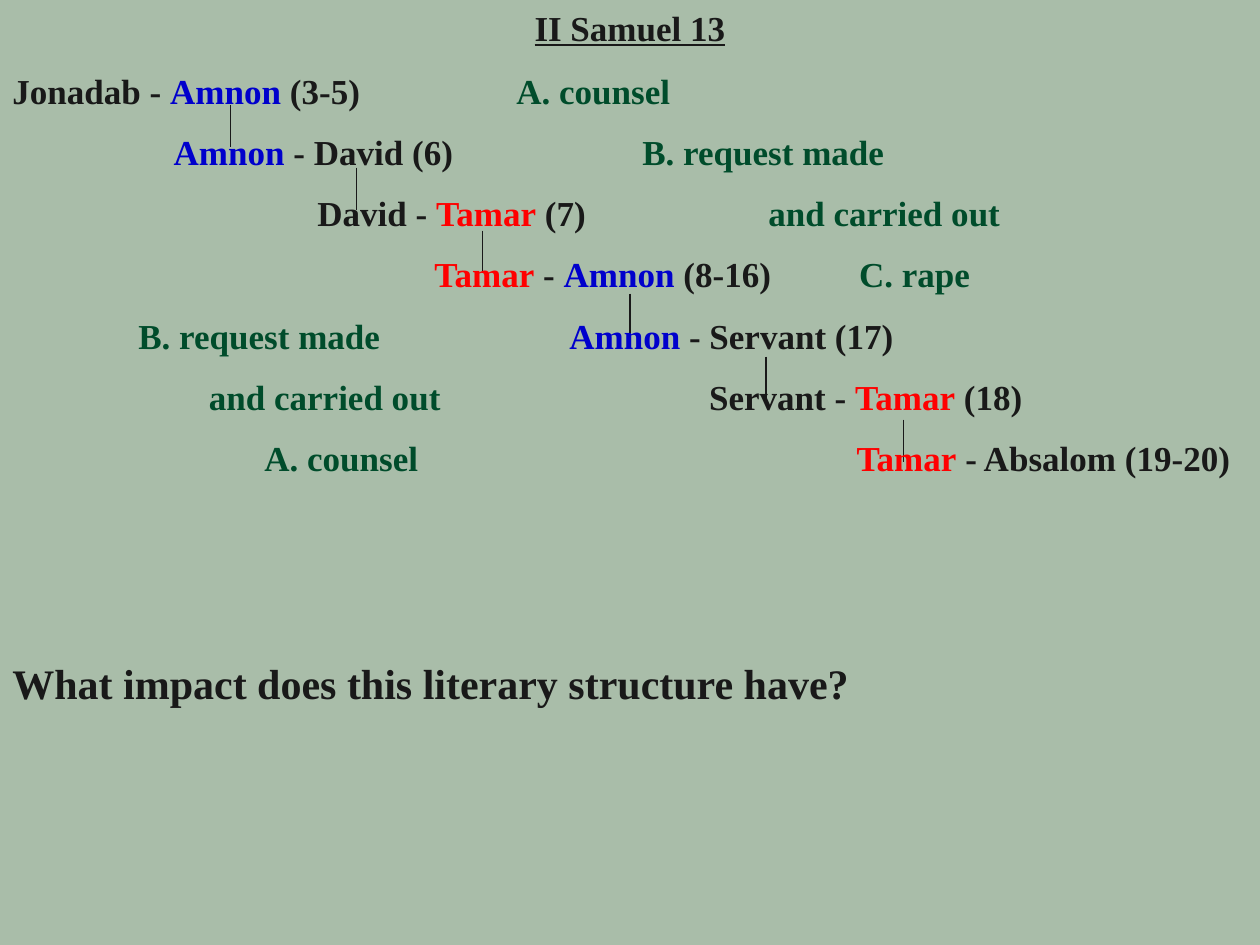
from lxml import etree
from pptx import Presentation
from pptx.dml.color import RGBColor
from pptx.enum.shapes import MSO_CONNECTOR
from pptx.enum.text import MSO_ANCHOR, MSO_AUTO_SIZE, PP_ALIGN
from pptx.oxml.ns import qn
from pptx.util import Inches, Pt

STRAIGHT = MSO_CONNECTOR.STRAIGHT
TOP = MSO_ANCHOR.TOP
NO_AUTOFIT = MSO_AUTO_SIZE.NONE
CENTER = PP_ALIGN.CENTER

SAGE = RGBColor(0xA9, 0xBD, 0xA9)
INK = RGBColor(0x19, 0x19, 0x19)
BLUE = RGBColor(0x00, 0x00, 0xCC)
RED = RGBColor(0xFF, 0x00, 0x00)
GREEN = RGBColor(0x00, 0x4C, 0x2B)
FONT_NAME = "Times New Roman"

# Each row: tab stops in inches, then its coloured runs.
ROWS = [
    ([4], [("Jonadab - ", INK), ("Amnon", BLUE), (" (3-5)\t", INK),
           ("A. counsel", GREEN)]),
    ([1.28, 5], [("\t", INK), ("Amnon", BLUE), (" - David (6)\t", INK),
                 ("B. request made", GREEN)]),
    ([2.42, 6], [("\tDavid - ", INK), ("Tamar", RED), (" (7)\t", INK),
                 ("and carried out", GREEN)]),
    ([3.35, 6.72], [("\t", INK), ("Tamar", RED), (" - ", INK), ("Amnon", BLUE),
                    (" (8-16)\t", INK), ("C. rape", GREEN)]),
    ([1, 4.42], [("\tB. request made\t", GREEN), ("Amnon", BLUE),
                 (" - Servant (17)", INK)]),
    ([1.56, 5.53], [("\tand carried out\t", GREEN), ("Servant - ", INK),
                    ("Tamar", RED), (" (18)", INK)]),
    ([2, 6.7], [("\tA. counsel\t", GREEN), ("Tamar", RED),
                (" - Absalom (19-20)", INK)]),
]
LINK_POSITIONS = [1.83, 2.83, 3.83, 5, 6.08, 7.17]


def format_font(font, size):
    font.name = FONT_NAME
    font.size = Pt(size)
    font.bold = True
    font.color.rgb = INK


def add_title(slide, left, top, width, height):
    title = slide.shapes.title
    title.left, title.top, title.width, title.height = left, top, width, height
    frame = title.text_frame
    frame.text = "II Samuel 13"
    frame.auto_size = NO_AUTOFIT
    frame.vertical_anchor = TOP
    paragraph = frame.paragraphs[0]
    paragraph.alignment = CENTER
    format_font(paragraph.font, 20)
    paragraph.font.underline = True


def add_text_frame(slide, left, top, width, height):
    frame = slide.shapes.add_textbox(left, top, width, height).text_frame
    frame.word_wrap = True
    return frame


def add_tab_stops(paragraph, positions):
    properties = paragraph._p.get_or_add_pPr()
    tab_list = etree.SubElement(properties, qn("a:tabLst"))
    for position in positions:
        etree.SubElement(tab_list, qn("a:tab"), pos=str(Inches(position)), algn="l")


def add_links(slide, left, top):
    """Draw the strokes that join each name to its repeat one row below."""
    for index, position in enumerate(LINK_POSITIONS):
        x = left + Inches(position)
        y = top + Inches(0.33 + 0.5 * index)
        link = slide.shapes.add_connector(STRAIGHT, x, y, x, y + Inches(0.34))
        link.line.color.rgb = INK
        link.line.width = Pt(0.75)
        etree.SubElement(link._element.spPr, qn("a:effectLst"))


def add_chain(slide, left, top, width, height):
    add_links(slide, left, top)
    frame = add_text_frame(slide, left, top, width, height)
    for index, (tab_stops, runs) in enumerate(ROWS):
        paragraph = frame.add_paragraph() if index else frame.paragraphs[0]
        if index:
            paragraph.space_before = Pt(11)
        add_tab_stops(paragraph, tab_stops)
        format_font(paragraph.font, 20)
        for text, color in runs:
            run = paragraph.add_run()
            run.text = text
            run.font.color.rgb = color


def add_question(slide, left, top, width, height):
    frame = add_text_frame(slide, left, top, width, height)
    frame.text = "What impact does this literary structure have?"
    format_font(frame.paragraphs[0].font, 24)


def main():
    presentation = Presentation()
    presentation.slide_width = Inches(10)
    presentation.slide_height = Inches(7.5)
    slide = presentation.slides.add_slide(presentation.slide_layouts[5])
    slide.background.fill.solid()
    slide.background.fill.fore_color.rgb = SAGE
    width = presentation.slide_width
    add_title(slide, Inches(0), Inches(0), width, Inches(0.43))
    add_chain(slide, Inches(0), Inches(0.5), width, Inches(3.43))
    add_question(slide, Inches(0), Inches(5.17), width, Inches(0.5))
    presentation.save("out.pptx")


if __name__ == "__main__":
    main()
